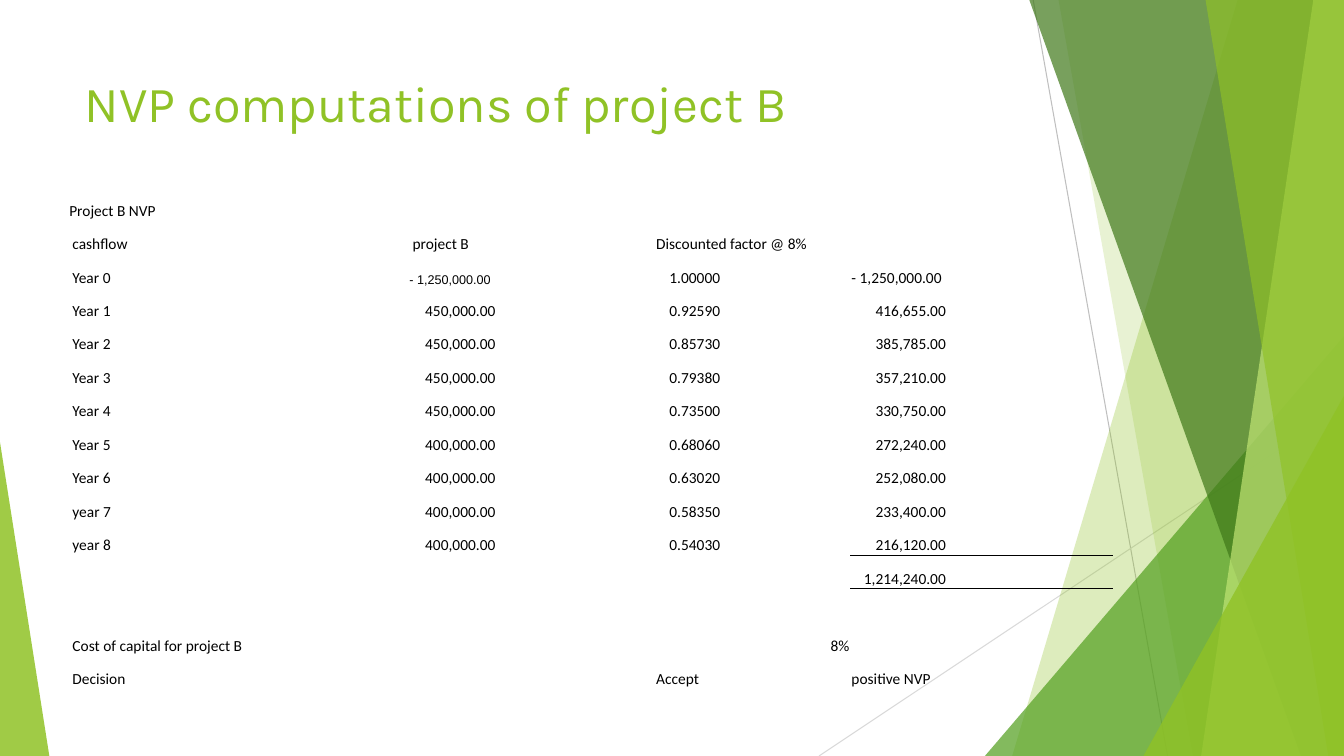
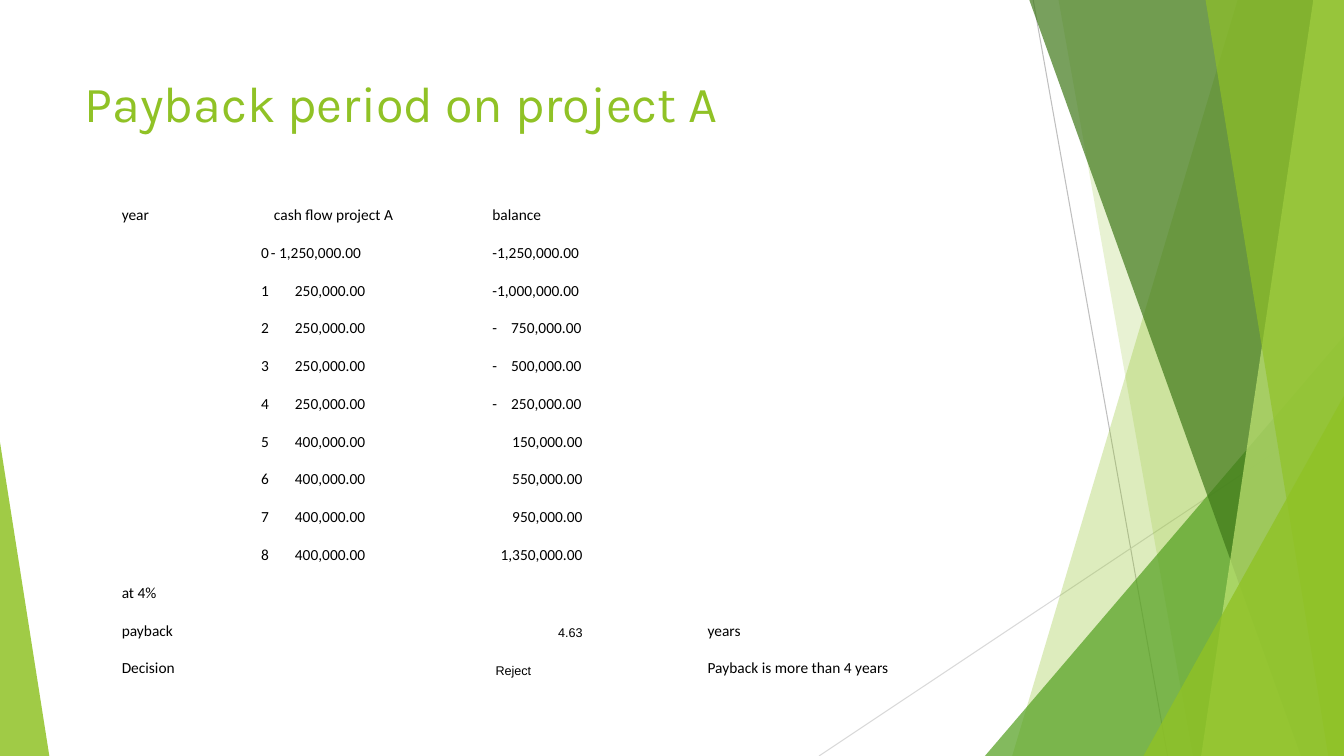
"""Build two project appraisal slides: discounted cash flows and payback period."""
from dataclasses import dataclass

from lxml import etree
from pptx import Presentation
from pptx import util as u
from pptx.dml.color import RGBColor
from pptx.enum import shapes, text
from pptx.oxml.ns import qn

PX = 9525
WIDTH, HEIGHT = 1280, 720


@dataclass(frozen=True)
class Theme:
    lime: str = "90C226"
    green: str = "54A021"
    forest: str = "3F7819"
    pale: str = "C0E474"
    ink: str = "000000"
    steel: str = "BFBFBF"
    silver: str = "D9D9D9"
    title_font: str = "Karla"
    body_font: str = "Calibri"
    small_font: str = "Arial"
    title_size: int = 36
    body_size: int = 11
    small_size: int = 9


theme = Theme()
NO_STYLE = "{2D5ABB26-0587-4C30-8999-92F81FD0307C}"


def px(*lengths):
    return [u.Emu(length * PX) for length in lengths]


def set_font(paragraph, name, size, color):
    paragraph.font.name = name
    paragraph.font.size = u.Pt(size)
    paragraph.font.color.rgb = RGBColor.from_string(color)


lines = [((984, 0, 1112, HEIGHT), theme.steel), ((WIDTH, 387, 780, HEIGHT), theme.silver)]

# Bands hold (top x, bottom x); triangles hold (left, top, width, height, apex).
facets = [
    ((1179, 964), theme.lime, 30),
    ((1008, 1136), theme.lime, 20),
    ((938, 320, 342, 400, 1), theme.green, 72),
    ((980, 1239), theme.forest, 70),
    ((1251, 1144), theme.pale, 70),
    ((1148, 1265), theme.lime, 65),
    ((1089, 377, 191, 343, 1), theme.lime, 80),
    ((0, 421, 47, 299, 0), theme.lime, 85),
]

flows_b = ["450,000.00"] * 4 + ["400,000.00"] * 4
factors = ["0.92590", "0.85730", "0.79380", "0.73500", "0.68060", "0.63020", "0.58350", "0.54030"]
present_values = ["416,655.00", "385,785.00", "357,210.00", "330,750.00",
                  "272,240.00", "252,080.00", "233,400.00", "216,120.00"]
years = [f"Year {n}" for n in range(1, 7)] + ["year 7", "year 8"]

flows_a = ["250,000.00"] * 4 + ["400,000.00"] * 4
balances = ["-1,000,000.00", "-\t750,000.00", "-\t500,000.00", "-\t250,000.00",
            "150,000.00", "550,000.00", "950,000.00", "1,350,000.00"]

contents = [
    {
        "title": "NVP computations of project B",
        "at": (65, 178), "height": 478, "columns": [324, 232, 189, 250],
        "indents": [4, 4, 4, 1], "number_margins": [1, 149, 124, 159],
        "special_indents": {(0, 0): 1}, "small": [(2, 1)],
        "spans": [((1, 2), (1, 3)), ((13, 0), (13, 1))],
        "rules": {(10, 3): 0.5, (11, 3): 1},
        "rows": [
            ["Project B NVP"],
            ["cashflow", "project B", "Discounted factor @ 8%"],
            ["Year 0", "- 1,250,000.00", "1.00000", "- 1,250,000.00"],
            *zip(years, flows_b, factors, present_values),
            ["", "", "", "1,214,240.00"],
            [],
            ["Cost of capital for project B", "", "8%"],
            ["Decision", "", "Accept", "positive NVP"],
        ],
    },
    {
        "title": "Payback period on project A",
        "at": (112, 178), "height": 468, "columns": [145, 211, 205, 252, 225],
        "indents": [4, 4, 1, 1, 1], "number_margins": [1, 120, 118, 1, 1],
        "special_indents": {(12, 2): 4}, "small": [(11, 2), (12, 2)],
        "spans": [((12, 3), (12, 4))],
        "rules": {},
        "rows": [
            ["year", "cash flow project A", "balance"],
            ["0", "- 1,250,000.00", "-1,250,000.00"],
            *zip("12345678", flows_a, balances),
            ["at 4%"],
            ["payback", "", "4.63", "years"],
            ["Decision", "", "Reject", "Payback is more than 4 years"],
        ],
    },
]

deck = Presentation()
deck.slide_width, deck.slide_height = px(WIDTH, HEIGHT)
layout = deck.slide_layouts[5]
pages = [deck.slides.add_slide(layout) for content in contents]

backdrop = pages[0].shapes.add_group_shape()
backdrop.element.nvGrpSpPr.cNvPr.set("id", "20")
layout.shapes.element.insert(2, backdrop.element)

for ends, color in lines:
    line = backdrop.shapes.add_connector(shapes.MSO_CONNECTOR.STRAIGHT, *px(*ends))
    line.line.color.rgb = RGBColor.from_string(color)
    line.line.width = u.Pt(0.75)
    etree.SubElement(line.element.spPr, qn("a:effectLst"))

for geometry, color, opacity in facets:
    if len(geometry) == 2:
        top_x, bottom_x = geometry
        outline = backdrop.shapes.build_freeform(top_x, -1, scale=PX)
        outline.add_line_segments([(WIDTH, -1), (WIDTH, HEIGHT), (bottom_x, HEIGHT)], close=True)
        facet = outline.convert_to_shape()
    else:
        *frame, apex = geometry
        facet = backdrop.shapes.add_shape(shapes.MSO_SHAPE.ISOSCELES_TRIANGLE, *px(*frame))
        facet.adjustments[0] = apex
    facet.shadow.inherit = False
    facet.fill.solid()
    facet.fill.fore_color.rgb = RGBColor.from_string(color)
    facet.line.fill.background()
    fill_color = next(facet.element.iter(qn("a:srgbClr")))
    etree.SubElement(fill_color, qn("a:alpha"), val=str(opacity * 1000))

for page, content in zip(pages, contents):
    title = page.shapes.title
    title.left, title.top, title.width, title.height = px(71, 64, 902, 138)
    title.text_frame.text = content["title"]
    title.text_frame.word_wrap = True
    title.text_frame.auto_size = text.MSO_AUTO_SIZE.NONE
    title.text_frame.vertical_anchor = text.MSO_ANCHOR.TOP
    heading = title.text_frame.paragraphs[0]
    heading.alignment = text.PP_ALIGN.LEFT
    set_font(heading, theme.title_font, theme.title_size, theme.lime)

    rows, columns = content["rows"], content["columns"]
    box = page.shapes.add_table(len(rows), len(columns),
                                *px(*content["at"], sum(columns), content["height"]))
    table = box.table
    table.first_row = table.horz_banding = False
    next(box.element.iter(qn("a:tableStyleId"))).text = NO_STYLE
    for column, width in zip(table.columns, columns):
        column.width = u.Emu(width * PX)
    for row in table.rows:
        row.height = u.Emu(content["height"] * PX // len(rows))

    for r, values in enumerate(rows):
        for c in range(len(columns)):
            value = values[c] if c < len(values) else ""
            cell = table.cell(r, c)
            number = value[:1].isdigit()
            indent = 1 if value.startswith("-") else content["indents"][c]
            indent = 1 if number else content["special_indents"].get((r, c), indent)
            inset = content["number_margins"][c] if number and "%" not in value else 1
            cell.margin_left, cell.margin_right, cell.margin_top, cell.margin_bottom = px(
                indent, inset, 1, 0)
            cell.vertical_anchor = text.MSO_ANCHOR.BOTTOM
            if (r, c) in content["rules"]:
                weight = u.Pt(content["rules"][r, c])
                border = etree.SubElement(cell._tc.get_or_add_tcPr(), qn("a:lnB"), w=str(weight))
                paint = etree.SubElement(border, qn("a:solidFill"))
                etree.SubElement(paint, qn("a:srgbClr"), val=theme.ink)
            cell.fill.background()

            cell.text_frame.text = value
            para = cell.text_frame.paragraphs[0]
            para.alignment = text.PP_ALIGN.RIGHT if number else text.PP_ALIGN.LEFT
            if "\t" in value:
                stops = etree.SubElement(para._p.get_or_add_pPr(), qn("a:tabLst"))
                etree.SubElement(stops, qn("a:tab"), pos=str(85 * PX), algn="r")
            if (r, c) in content["small"]:
                set_font(para, theme.small_font, theme.small_size, theme.ink)
            else:
                set_font(para, theme.body_font, theme.body_size, theme.ink)

    for first, last in content["spans"]:
        table.cell(*first).merge(table.cell(*last))

deck.save("out.pptx")
